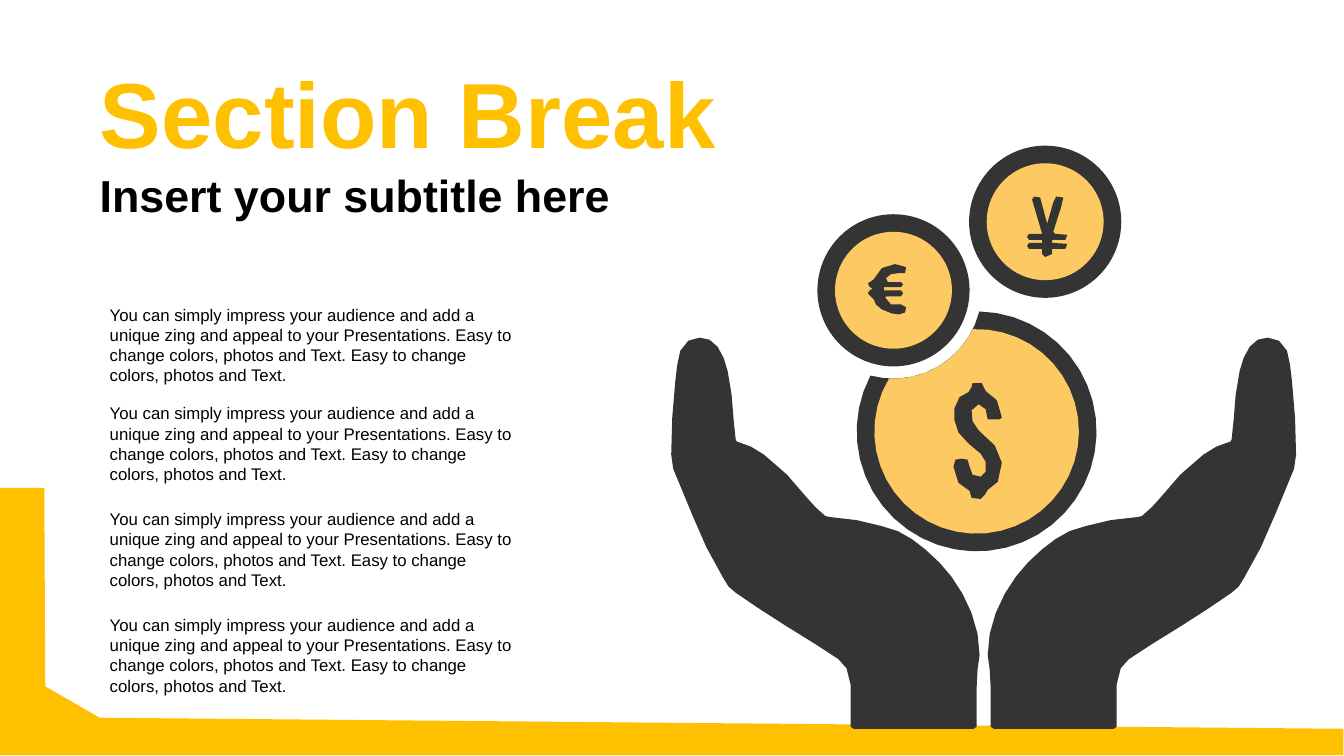
from dataclasses import dataclass
from math import acos, atan2, cos, hypot, pi, sin

from pptx import Presentation as Deck
from pptx.dml.color import RGBColor as Rgb
from pptx.enum.shapes import MSO_SHAPE as Preset
from pptx.enum.text import MSO_ANCHOR as Anchor, MSO_AUTO_SIZE as Fit, PP_ALIGN as Align
from pptx.util import Cm, Pt

UNIT = 0.0254
Point = tuple[float, float]


@dataclass(frozen=True)
class Theme:
    font: str = "Arial"
    gold: str = "FFC000"
    amber: str = "FDC963"
    dark: str = "343434"
    black: str = "000000"
    head: int = 66
    sub: int = 32
    body: int = 12


@dataclass(frozen=True)
class Disc:
    x: float
    y: float
    r: float
    color: str


@dataclass(frozen=True)
class Path:
    points: list[Point]
    color: str


THEME = Theme()
BLURB = ("You can simply impress your audience and add a unique zing and appeal to your "
         "Presentations. Easy to change colors, photos and Text. Easy to change colors, "
         "photos and Text.")
TOPS = [297, 395, 500, 605]
MIRROR = 1952

BAND = Path([(0, 484), (0, 749), (1333, 749), (1333, 723), (99, 712), (45, 681),
             (44, 484)], THEME.gold)
HAND = Path([
    (964, 608), (955, 589), (944, 572), (932, 558), (918, 545), (905, 535), (891, 527),
    (875, 522), (850, 516), (824, 513), (819, 512), (809, 503), (800, 493), (781, 471),
    (758, 451), (745, 443), (731, 438), (730, 436), (728, 417), (726, 392), (722, 368),
    (718, 355), (712, 344), (704, 337), (694, 335), (683, 338), (675, 348), (672, 362),
    (670, 379), (667, 415), (666, 451), (668, 465), (687, 511), (701, 543), (718, 574),
    (723, 582), (730, 588), (752, 603), (780, 621), (809, 639), (832, 654), (840, 663),
    (844, 679), (844, 721), (847, 723), (966, 723), (969, 721), (969, 684), (970, 664),
    (972, 650), (970, 629)], THEME.dark)
DOLLAR = Path([
    (954, 455), (960, 456), (962, 463), (965, 471), (973, 473), (978, 468), (978, 458),
    (973, 450), (961, 440), (951, 429), (947, 417), (947, 405), (952, 394), (961, 389),
    (964, 384), (965, 380), (974, 380), (977, 386), (978, 388), (989, 397), (994, 414),
    (992, 416), (980, 416), (978, 406), (971, 401), (964, 407), (965, 418), (971, 427),
    (987, 442), (994, 459), (990, 478), (980, 486), (977, 491), (973, 495), (964, 494),
    (962, 487), (951, 479), (946, 463), (948, 456)], THEME.dark)
YEN = Path([
    (1039, 222), (1045, 201), (1048, 195), (1055, 196), (1053, 205), (1045, 230),
    (1047, 232), (1059, 233), (1057, 238), (1044, 238), (1044, 241), (1059, 242),
    (1057, 247), (1044, 247), (1044, 252), (1037, 255), (1034, 252), (1034, 247),
    (1021, 247), (1019, 244), (1021, 241), (1034, 241), (1034, 238), (1021, 238),
    (1019, 235), (1021, 232), (1034, 232), (1024, 198), (1026, 195), (1032, 196)],
    THEME.dark)
EURO = Path([
    (899, 305), (894, 302), (884, 302), (878, 295), (880, 294), (894, 294), (896, 291),
    (894, 288), (877, 288), (877, 285), (894, 285), (896, 282), (894, 280), (881, 280),
    (879, 276), (884, 272), (892, 271), (898, 271), (899, 265), (888, 262), (875, 266),
    (867, 277), (863, 280), (861, 281), (863, 285), (866, 286), (863, 288), (861, 291),
    (863, 293), (867, 297), (869, 302), (875, 307), (885, 311), (892, 312), (898, 310)],
    THEME.dark)

BITE = Disc(886.5, 288, 87.7, THEME.amber)
CUTS = [Disc(969, 428, 119, THEME.dark), Disc(969, 428, 101.5, THEME.amber)]
COINS = [Disc(x, y, r, color) for x, y in ((1037, 220), (886.5, 288))
         for r, color in ((75.5, THEME.dark), (58, THEME.amber))]


def size(value: float) -> Cm:
    return Cm(value * UNIT)


def arc(disc: Disc, start: float, end: float, count: int) -> list[Point]:
    turns = [start + (end - start) * i / count for i in range(count + 1)]
    return [(disc.x + disc.r * cos(t), disc.y + disc.r * sin(t)) for t in turns]


def cut(disc: Disc, bite: Disc) -> list[Point]:
    dx, dy = bite.x - disc.x, bite.y - disc.y
    gap, base = hypot(dx, dy), atan2(dy, dx)
    a = acos((gap ** 2 + disc.r ** 2 - bite.r ** 2) / (2 * gap * disc.r))
    b = acos((gap ** 2 + bite.r ** 2 - disc.r ** 2) / (2 * gap * bite.r))
    return (arc(disc, base + a, base + 2 * pi - a, 36)
            + arc(bite, base + pi + b, base + pi - b, 10))


def paint(shape, color: str) -> None:
    shape.shadow.inherit = False
    shape.fill.solid()
    shape.fill.fore_color.rgb = Rgb.from_string(color)
    shape.line.fill.background()


def draw(slide, points: list[Point], color: str) -> None:
    first, *rest = [(size(x), size(y)) for x, y in points]
    form = slide.shapes.build_freeform(*first)
    form.add_line_segments(rest, close=True)
    paint(form.convert_to_shape(), color)


def ring(slide, disc: Disc) -> None:
    wide = size(2 * disc.r)
    paint(slide.shapes.add_shape(Preset.OVAL, size(disc.x - disc.r),
                                 size(disc.y - disc.r), wide, wide), disc.color)


def write(box, text: str, points: int, color: str, bold: bool = False) -> None:
    frame = box.text_frame
    frame.text = text
    frame.word_wrap = True
    frame.auto_size = Fit.NONE
    para = frame.paragraphs[0]
    para.alignment = Align.LEFT
    if bold:
        frame.vertical_anchor = Anchor.MIDDLE
        para.line_spacing = 0.9
        para.space_before = Pt(10)
    font = para.runs[0].font
    font.name, font.size, font.bold = THEME.font, Pt(points), bold
    font.color.rgb = Rgb.from_string(color)


def main() -> None:
    deck = Deck()
    deck.slide_width, deck.slide_height = Cm(33.87), Cm(19.05)
    slide = deck.slides.add_slide(deck.slide_layouts[5])
    title = slide.shapes.title
    title.left, title.top, title.width, title.height = map(size, (89, 81, 665, 74))
    write(title, "Section Break", THEME.head, THEME.gold, True)
    sub = slide.shapes.add_textbox(*map(size, (89, 181, 665, 31)))
    write(sub, "Insert your subtitle here", THEME.sub, THEME.black, True)
    for top in TOPS:
        box = slide.shapes.add_textbox(*map(size, (99, top, 425, 91)))
        write(box, BLURB, THEME.body, THEME.black)
    draw(slide, BAND.points, BAND.color)
    for disc in CUTS:
        draw(slide, cut(disc, BITE), disc.color)
    for disc in COINS:
        ring(slide, disc)
    for sign in (DOLLAR, YEN, EURO):
        draw(slide, sign.points, sign.color)
    twin = [(MIRROR - x, y) for x, y in HAND.points]
    for palm in (HAND.points, twin):
        draw(slide, palm, HAND.color)
    deck.save("out.pptx")


if __name__ == "__main__":
    main()
